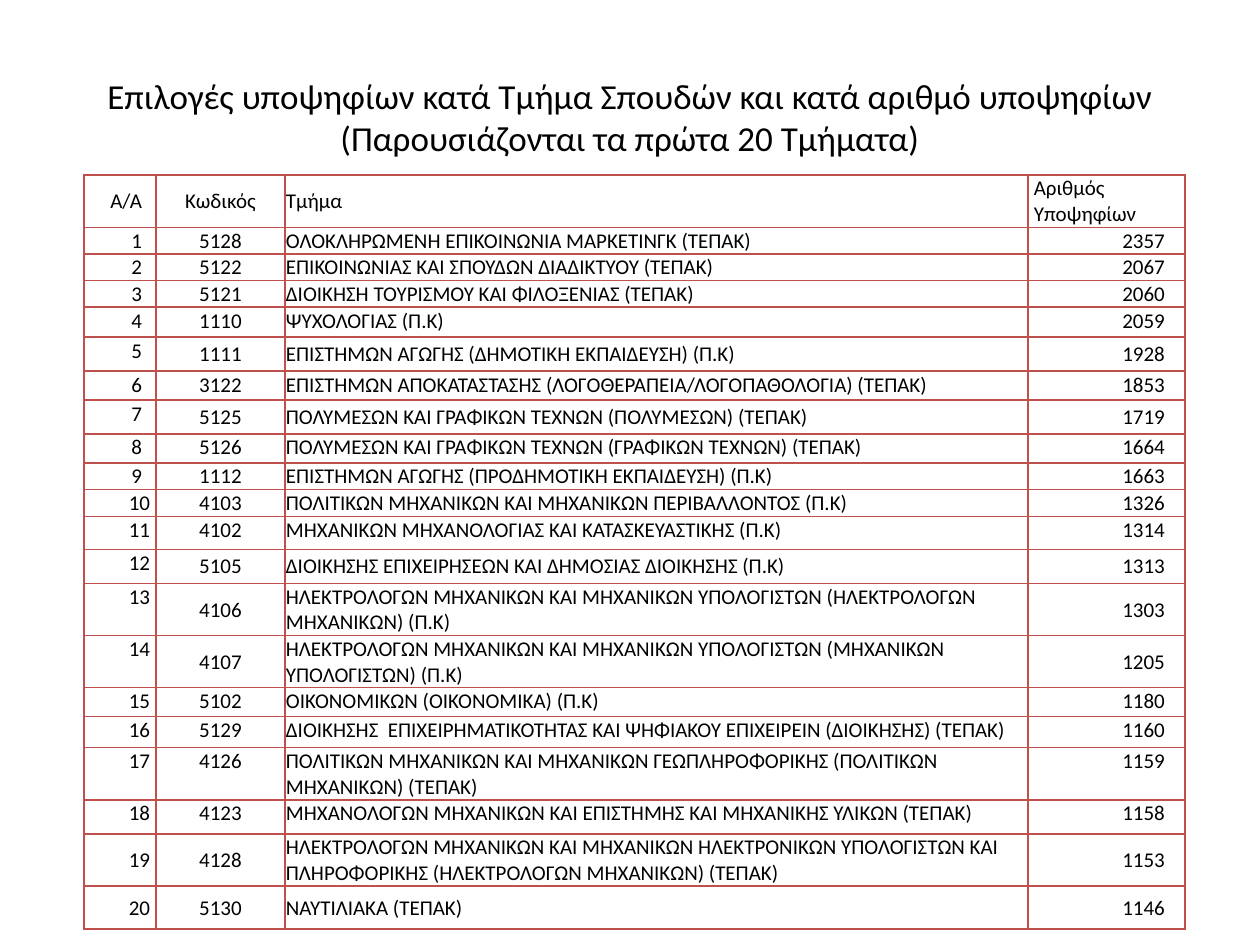
from dataclasses import dataclass
from typing import NamedTuple

from lxml.etree import SubElement
from pptx import Presentation
from pptx.dml.color import RGBColor
from pptx.enum.text import MSO_ANCHOR as Anchor, PP_ALIGN as Align
from pptx.oxml.ns import qn
from pptx.util import Pt

PX = 914400 // 126


def px(n: int) -> int:
    return n * PX


@dataclass(frozen=True)
class Theme:
    font: str = "Calibri"
    text: str = "000000"
    border: str = "C0504D"
    border_pt: int = 1
    title_pt: int = 20
    body_pt: int = 12


class Column(NamedTuple):
    header: str
    width: int
    align: Align
    right_inset: int


class Department(NamedTuple):
    code: str
    name: str
    applicants: str
    height: int
    anchors: str = "tttt"  # one letter per column: t = top, m = middle


THEME = Theme()
ANCHORS = {"t": Anchor.TOP, "m": Anchor.MIDDLE}
HEADER_HEIGHT, HEADER_ANCHORS = 37, "mmmt"
TABLE_HEIGHT = 746

TITLE = ("Επιλογές υποψηφίων κατά Τμήμα Σπουδών και κατά αριθμό υποψηφίων",
         "(Παρουσιάζονται τα πρώτα 20 Τμήματα)")

COLUMNS = [
    Column("A/A", 72, Align.RIGHT, 14),
    Column("Κωδικός", 129, Align.CENTER, 1),
    Column("Τμήμα", 743, Align.LEFT, 1),
    Column("Αριθμός Υποψηφίων", 157, Align.RIGHT, 20),
]

DEPARTMENTS = [
    Department("5128", "ΟΛΟΚΛΗΡΩΜΕΝΗ ΕΠΙΚΟΙΝΩΝΙΑ ΜΑΡΚΕΤΙΝΓΚ (ΤΕΠΑΚ)", "2357", 18),
    Department("5122", "ΕΠΙΚΟΙΝΩΝΙΑΣ ΚΑΙ ΣΠΟΥΔΩΝ ΔΙΑΔΙΚΤΥΟΥ (ΤΕΠΑΚ)", "2067", 18),
    Department("5121", "ΔΙΟΙΚΗΣΗ ΤΟΥΡΙΣΜΟΥ ΚΑΙ ΦΙΛΟΞΕΝΙΑΣ (ΤΕΠΑΚ)", "2060", 18),
    Department("1110", "ΨΥΧΟΛΟΓΙΑΣ (Π.Κ)", "2059", 30),
    Department("1111", "ΕΠΙΣΤΗΜΩΝ ΑΓΩΓΗΣ (ΔΗΜΟΤΙΚΗ ΕΚΠΑΙΔΕΥΣΗ) (Π.Κ)", "1928", 34, "tmmm"),
    Department("3122", "ΕΠΙΣΤΗΜΩΝ ΑΠΟΚΑΤΑΣΤΑΣΗΣ (ΛΟΓΟΘΕΡΑΠΕΙΑ/ΛΟΓΟΠΑΘΟΛΟΓΙΑ) (ΤΕΠΑΚ)",
               "1853", 29),
    Department("5125", "ΠΟΛΥΜΕΣΩΝ ΚΑΙ ΓΡΑΦΙΚΩΝ ΤΕΧΝΩΝ (ΠΟΛΥΜΕΣΩΝ) (ΤΕΠΑΚ)",
               "1719", 34, "tmmm"),
    Department("5126", "ΠΟΛΥΜΕΣΩΝ ΚΑΙ ΓΡΑΦΙΚΩΝ ΤΕΧΝΩΝ (ΓΡΑΦΙΚΩΝ ΤΕΧΝΩΝ) (ΤΕΠΑΚ)",
               "1664", 29),
    Department("1112", "ΕΠΙΣΤΗΜΩΝ ΑΓΩΓΗΣ (ΠΡΟΔΗΜΟΤΙΚΗ ΕΚΠΑΙΔΕΥΣΗ) (Π.Κ)", "1663", 18),
    Department("4103", "ΠΟΛΙΤΙΚΩΝ ΜΗΧΑΝΙΚΩΝ ΚΑΙ ΜΗΧΑΝΙΚΩΝ ΠΕΡΙΒΑΛΛΟΝΤΟΣ (Π.Κ)",
               "1326", 18),
    Department("4102", "ΜΗΧΑΝΙΚΩΝ ΜΗΧΑΝΟΛΟΓΙΑΣ ΚΑΙ ΚΑΤΑΣΚΕΥΑΣΤΙΚΗΣ (Π.Κ)", "1314", 33),
    Department("5105", "ΔΙΟΙΚΗΣΗΣ ΕΠΙΧΕΙΡΗΣΕΩΝ ΚΑΙ ΔΗΜΟΣΙΑΣ ΔΙΟΙΚΗΣΗΣ (Π.Κ)",
               "1313", 34, "tmmm"),
    Department("4106", "ΗΛΕΚΤΡΟΛΟΓΩΝ ΜΗΧΑΝΙΚΩΝ ΚΑΙ ΜΗΧΑΝΙΚΩΝ ΥΠΟΛΟΓΙΣΤΩΝ "
               "(ΗΛΕΚΤΡΟΛΟΓΩΝ ΜΗΧΑΝΙΚΩΝ) (Π.Κ)", "1303", 34, "tmtm"),
    Department("4107", "ΗΛΕΚΤΡΟΛΟΓΩΝ ΜΗΧΑΝΙΚΩΝ ΚΑΙ ΜΗΧΑΝΙΚΩΝ ΥΠΟΛΟΓΙΣΤΩΝ "
               "(ΜΗΧΑΝΙΚΩΝ ΥΠΟΛΟΓΙΣΤΩΝ) (Π.Κ)", "1205", 34, "tmtm"),
    Department("5102", "ΟΙΚΟΝΟΜΙΚΩΝ (ΟΙΚΟΝΟΜΙΚΑ) (Π.Κ)", "1180", 29),
    Department("5129", "ΔΙΟΙΚΗΣΗΣ  ΕΠΙΧΕΙΡΗΜΑΤΙΚΟΤΗΤΑΣ ΚΑΙ ΨΗΦΙΑΚΟΥ ΕΠΙΧΕΙΡΕΙΝ "
               "(ΔΙΟΙΚΗΣΗΣ) (ΤΕΠΑΚ)", "1160", 31),
    Department("4126", "ΠΟΛΙΤΙΚΩΝ ΜΗΧΑΝΙΚΩΝ ΚΑΙ ΜΗΧΑΝΙΚΩΝ ΓΕΩΠΛΗΡΟΦΟΡΙΚΗΣ "
               "(ΠΟΛΙΤΙΚΩΝ ΜΗΧΑΝΙΚΩΝ) (ΤΕΠΑΚ)", "1159", 29),
    Department("4123", "ΜΗΧΑΝΟΛΟΓΩΝ ΜΗΧΑΝΙΚΩΝ ΚΑΙ ΕΠΙΣΤΗΜΗΣ ΚΑΙ ΜΗΧΑΝΙΚΗΣ ΥΛΙΚΩΝ (ΤΕΠΑΚ)",
               "1158", 34),
    Department("4128", "ΗΛΕΚΤΡΟΛΟΓΩΝ ΜΗΧΑΝΙΚΩΝ ΚΑΙ ΜΗΧΑΝΙΚΩΝ ΗΛΕΚΤΡΟΝΙΚΩΝ ΥΠΟΛΟΓΙΣΤΩΝ ΚΑΙ "
               "ΠΛΗΡΟΦΟΡΙΚΗΣ (ΗΛΕΚΤΡΟΛΟΓΩΝ ΜΗΧΑΝΙΚΩΝ) (ΤΕΠΑΚ)", "1153", 44, "mmtm"),
    Department("5130", "ΝΑΥΤΙΛΙΑΚΑ (ΤΕΠΑΚ)", "1146", 43, "mmmm"),
]


def add_run(p, text: str, size: int) -> None:
    r = p.add_run()
    r.text = text
    r.font.name = THEME.font
    r.font.size = Pt(size)
    r.font.color.rgb = RGBColor.from_string(THEME.text)


def add_borders(cell) -> None:
    tc_pr = cell._tc.get_or_add_tcPr()
    for i, side in enumerate(("lnL", "lnR", "lnT", "lnB")):
        ln = SubElement(tc_pr, qn(f"a:{side}"), w=str(Pt(THEME.border_pt)))
        fill = SubElement(ln, qn("a:solidFill"))
        SubElement(fill, qn("a:srgbClr"), val=THEME.border)
        tc_pr.remove(ln)
        tc_pr.insert(i, ln)  # borders come before the cell fill


def fill_cell(cell, text: str, align: Align, anchor: str, left: int, right: int) -> None:
    cell.margin_left, cell.margin_right = px(left), px(right)
    cell.margin_top, cell.margin_bottom = px(1), 0
    cell.vertical_anchor = ANCHORS[anchor]
    cell.fill.background()
    add_borders(cell)
    p = cell.text_frame.paragraphs[0]
    p.alignment = align
    add_run(p, text, THEME.body_pt)


def add_title(s) -> None:
    sp = s.shapes.title
    sp.left, sp.top, sp.width, sp.height = px(63), px(38), px(1134), px(157)
    tf = sp.text_frame
    tf.word_wrap = True
    tf.vertical_anchor = Anchor.MIDDLE
    p = tf.paragraphs[0]
    p.alignment = Align.CENTER
    add_run(p, TITLE[0], THEME.title_pt)
    p.add_line_break()
    add_run(p, TITLE[1], THEME.title_pt)


def add_departments(s) -> None:
    frame = s.shapes.add_table(len(DEPARTMENTS) + 1, len(COLUMNS), px(84), px(175),
                               px(sum(c.width for c in COLUMNS)), px(TABLE_HEIGHT))
    table = frame.table
    table.first_row = table.horz_banding = False

    table.rows[0].height = px(HEADER_HEIGHT)
    for i, col in enumerate(COLUMNS):
        table.columns[i].width = px(col.width)
        last = i == len(COLUMNS) - 1
        fill_cell(table.cell(0, i), col.header, Align.LEFT if last else col.align,
                  HEADER_ANCHORS[i], 6 if last else 1, 1 if last else col.right_inset)

    for rank, dept in enumerate(DEPARTMENTS, 1):
        table.rows[rank].height = px(dept.height)
        values = (str(rank), dept.code, dept.name, dept.applicants)
        for i, (col, value) in enumerate(zip(COLUMNS, values)):
            right = 6 if i == 0 and rank >= 10 else col.right_inset
            fill_cell(table.cell(rank, i), value, col.align, dept.anchors[i], 1, right)
    frame.height = px(TABLE_HEIGHT)


def main() -> None:
    prs = Presentation()
    prs.slide_width, prs.slide_height = px(1260), px(945)
    s = prs.slides.add_slide(prs.slide_layouts[5])
    add_title(s)
    add_departments(s)
    prs.save("out.pptx")


if __name__ == "__main__":
    main()
